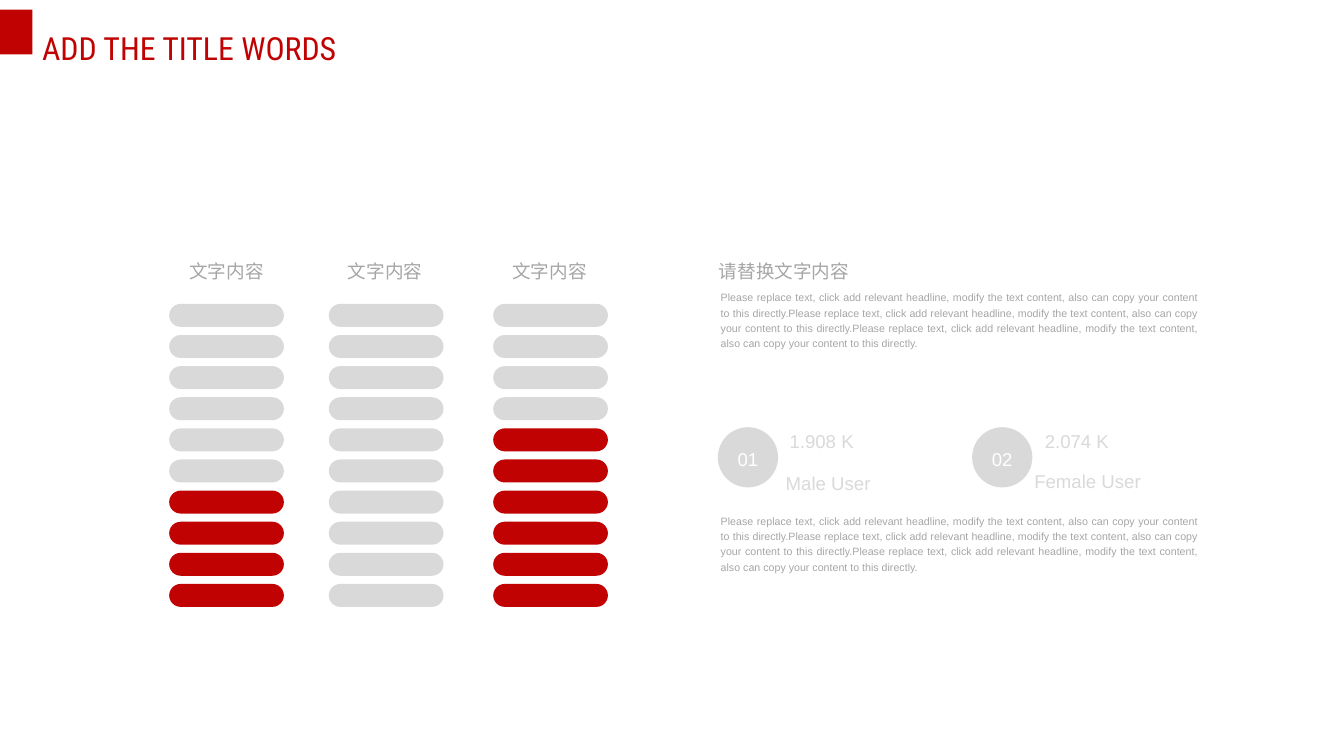
from dataclasses import dataclass

from pptx import Presentation
from pptx.dml.color import RGBColor
from pptx.enum.shapes import MSO_SHAPE as Preset
from pptx.enum.text import MSO_ANCHOR as Anchor, MSO_AUTO_SIZE as AutoSize, PP_ALIGN as Align
from pptx.shapes.autoshape import Shape
from pptx.slide import Slide
from pptx.util import Inches, Pt

COLORS = {"red": "C00202", "gray": "A6A6A6", "light": "D9D9D9", "white": "FFFFFF"}
SENTENCE = (
    "Please replace text, click add relevant headline, modify the text content, "
    "also can copy your content to this directly."
)
PILL_COUNT = 10
PILL_TOP = 3.18
PILL_PITCH = 2.93 / (PILL_COUNT - 1)


@dataclass(frozen=True)
class Box:
    left: float
    top: float
    width: float
    height: float

    def lengths(self) -> tuple[int, int, int, int]:
        return Inches(self.left), Inches(self.top), Inches(self.width), Inches(self.height)


@dataclass(frozen=True)
class Style:
    color: str = "gray"
    size: int = 14
    font: str = "Arial"
    align: Align = Align.JUSTIFY
    spacing: float = 1.2


@dataclass(frozen=True)
class Label:
    text: str
    box: Box
    style: Style = Style()
    wrap: bool = True


@dataclass(frozen=True)
class Column:
    left: float
    label_left: float
    red_count: int


@dataclass(frozen=True)
class Badge:
    number: str
    left: float


HEADING = Style(align=Align.CENTER, spacing=1.0)
PARAGRAPH = Style(size=8)
FIGURE = Style(color="light", align=Align.LEFT)
NUMBER = Style(color="white", align=Align.CENTER)
TITLE = Style(color="red", size=24, font="Roboto Condensed", align=Align.LEFT, spacing=1.5)

COLUMNS = [Column(1.77, 1.83, 4), Column(3.44, 3.49, 0), Column(5.16, 5.21, 6)]
BADGES = [Badge("01", 7.51), Badge("02", 10.17)]
LABELS = [
    Label("请替换文字内容", Box(7.52, 2.67, 4.48, 0.26)),
    Label(SENTENCE * 3, Box(7.54, 3.02, 5, 0.65), PARAGRAPH),
    Label("1.908 K", Box(8.26, 4.45, 0.7, 0.26), FIGURE, wrap=False),
    Label("Male User", Box(8.22, 4.89, 0.9, 0.26), FIGURE, wrap=False),
    Label("2.074 K", Box(10.93, 4.45, 0.7, 0.26), FIGURE, wrap=False),
    Label("Female User", Box(10.82, 4.87, 1.13, 0.26), FIGURE, wrap=False),
    Label(SENTENCE * 3, Box(7.54, 5.36, 5, 0.65), PARAGRAPH),
]


def rgb(name: str) -> RGBColor:
    return RGBColor.from_string(COLORS[name])


def write(shape: Shape, text: str, style: Style) -> None:
    shape.text_frame.text = text
    para = shape.text_frame.paragraphs[0]
    para.alignment = style.align
    para.line_spacing = style.spacing
    font = para.runs[0].font
    font.name = style.font
    font.size = Pt(style.size)
    font.color.rgb = rgb(style.color)


def clear_margins(shape: Shape) -> None:
    frame = shape.text_frame
    frame.margin_left = frame.margin_right = frame.margin_top = frame.margin_bottom = 0


def add_title(page: Slide, text: str, box: Box) -> None:
    title = page.shapes.title
    title.left, title.top, title.width, title.height = box.lengths()
    title.text_frame.auto_size = AutoSize.NONE
    title.text_frame.vertical_anchor = Anchor.TOP
    write(title, text, TITLE)


def add_filled(page: Slide, preset: Preset, box: Box, color: str) -> Shape:
    shape = page.shapes.add_shape(preset, *box.lengths())
    shape.shadow.inherit = False
    shape.fill.solid()
    shape.fill.fore_color.rgb = rgb(color)
    shape.line.fill.background()
    return shape


def add_label(page: Slide, label: Label) -> None:
    shape = page.shapes.add_textbox(*label.box.lengths())
    clear_margins(shape)
    shape.text_frame.word_wrap = label.wrap
    shape.text_frame.auto_size = AutoSize.SHAPE_TO_FIT_TEXT
    write(shape, label.text, label.style)


def add_column(page: Slide, column: Column) -> None:
    add_label(page, Label("文字内容", Box(column.label_left, 2.72, 1.08, 0.24), HEADING))
    for row in range(PILL_COUNT):
        color = "red" if row >= PILL_COUNT - column.red_count else "light"
        box = Box(column.left, PILL_TOP + row * PILL_PITCH, 1.2, 0.24)
        pill = add_filled(page, Preset.ROUNDED_RECTANGLE, box, color)
        pill.adjustments[0] = 0.5


def add_badge(page: Slide, badge: Badge) -> None:
    circle = add_filled(page, Preset.OVAL, Box(badge.left, 4.47, 0.63, 0.63), "light")
    clear_margins(circle)
    circle.text_frame.vertical_anchor = Anchor.MIDDLE
    write(circle, badge.number, NUMBER)


def main() -> None:
    deck = Presentation()
    deck.slide_width = Inches(14.06)
    deck.slide_height = Inches(7.91)
    page = deck.slides.add_slide(deck.slide_layouts.get_by_name("Title Only"))
    add_filled(page, Preset.RECTANGLE, Box(0, 0.1, 0.34, 0.47), "red")
    add_title(page, "ADD THE TITLE WORDS", Box(0.34, 0.05, 3.54, 0.63))
    for column in COLUMNS:
        add_column(page, column)
    for badge in BADGES:
        add_badge(page, badge)
    for label in LABELS:
        add_label(page, label)
    deck.save("out.pptx")


if __name__ == "__main__":
    main()
